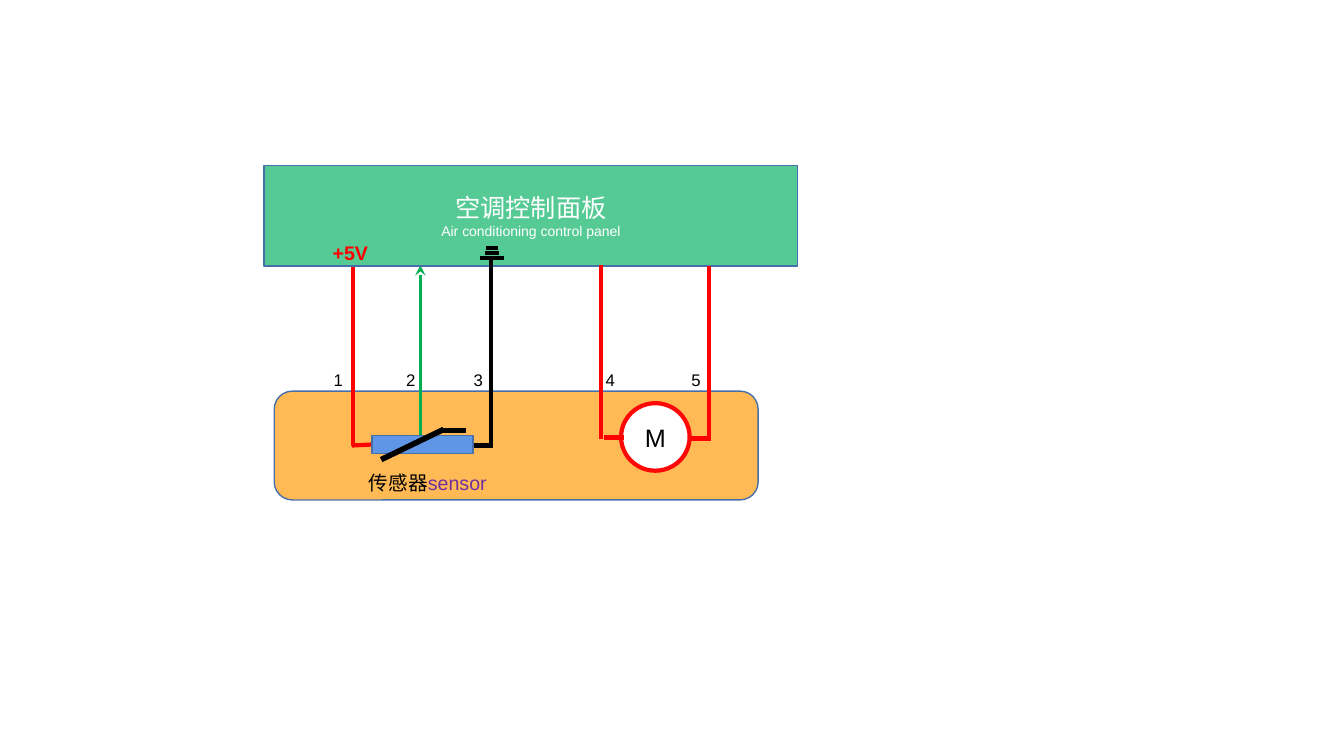
from pptx import Presentation
from pptx import util as u
from pptx.dml.color import RGBColor
from pptx.enum import shapes, text
from pptx.oxml import parse_xml
from pptx.oxml.ns import nsdecls

PX = u.Inches(1) // 100
FONT = "Arial"
WHITE = RGBColor(0xFF, 0xFF, 0xFF)
BLACK = RGBColor(0, 0, 0)
RED = RGBColor(0xFF, 0, 0)
GREEN = RGBColor(0, 0xB0, 0x50)
PURPLE = RGBColor(0x70, 0x30, 0xA0)
EDGE = RGBColor(0x47, 0x6F, 0xAA)
MINT = RGBColor(0x56, 0xCA, 0x95)
AMBER = RGBColor(0xFF, 0xBA, 0x55)
BLUE = RGBColor(0x60, 0x96, 0xE6)
RING = RGBColor(0xFD, 0x07, 0x07)


def px(*nums):
    return [n * PX for n in nums]


def write(para, words, size=12, color=BLACK, bold=False):
    run = para.add_run()
    run.text = words
    run.font.name = FONT
    run.font.size = u.Pt(size)
    run.font.color.rgb = color
    run.font.bold = bold


def add_box(tree, kind, area, fill, line=EDGE, width=1):
    box = tree.add_shape(kind, *px(*area))
    box.shadow.inherit = False
    box.fill.solid()
    box.fill.fore_color.rgb = fill
    box.line.color.rgb = line
    box.line.width = u.Pt(width)
    frame = box.text_frame
    frame.word_wrap = True
    frame.vertical_anchor = text.MSO_ANCHOR.MIDDLE
    frame.paragraphs[0].alignment = text.PP_ALIGN.CENTER
    return frame


def add_label(tree, area):
    frame = tree.add_textbox(*px(*area)).text_frame
    frame.word_wrap = True
    return frame.paragraphs[0]


def add_wire(tree, start, end, color, width, head=False):
    wire = tree.add_connector(shapes.MSO_CONNECTOR.STRAIGHT, *px(*start, *end))
    wire.line.color.rgb = color
    wire.line.width = u.Pt(width)
    if head:
        arrow = parse_xml(f'<a:headEnd {nsdecls("a")} type="stealth"/>')
        wire.line._get_or_add_ln().append(arrow)
    wire._element.spPr.append(parse_xml(f'<a:effectLst {nsdecls("a")}/>'))


def add_panel(tree):
    frame = add_box(tree, shapes.MSO_SHAPE.RECTANGLE, (262, 164, 529, 100), MINT)
    write(frame.paragraphs[0], "空调控制面板", size=18, color=WHITE)
    para = frame.add_paragraph()
    para.alignment = text.PP_ALIGN.CENTER
    write(para, "Air conditioning control panel", size=10, color=WHITE)
    write(add_label(tree, (320, 234, 58, 34)), "+5V", size=14, color=RED, bold=True)


def add_ground(tree, mid, base):
    group = tree.add_group_shape().shapes
    for step, half in enumerate((12, 7, 6)):
        y = base - 5 * step
        add_wire(group, (mid - half, y), (mid + half, y), BLACK, 2.25)


def add_motor(tree):
    frame = add_box(tree, shapes.MSO_SHAPE.OVAL, (616, 400, 68, 67), WHITE, RING, 3)
    write(frame.paragraphs[0], "M", size=18)
    add_wire(tree, (596, 436), (596, 263), RED, 3)
    add_wire(tree, (599, 434), (619, 434), RED, 3)
    add_wire(tree, (703, 437), (703, 264), RED, 3)
    add_wire(tree, (685, 435), (705, 435), RED, 3)


def add_sensor(tree):
    add_wire(tree, (468, 442), (488, 442), BLACK, 3)
    add_wire(tree, (349, 442), (369, 441), RED, 3)
    group = tree.add_group_shape().shapes
    add_box(group, shapes.MSO_SHAPE.RECTANGLE, (369, 432, 100, 18), BLUE)
    add_wire(group, (378, 456), (440, 426), BLACK, 4)
    add_wire(group, (438, 427), (462, 427), BLACK, 4)
    para = add_label(tree, (356, 462, 144, 34))
    write(para, "传感器", size=14)
    write(para, "sensor", size=14, color=PURPLE)


def main():
    deck = Presentation()
    deck.slide_width, deck.slide_height = u.Inches(13.33), u.Inches(7.5)
    tree = deck.slides.add_slide(deck.slide_layouts[6]).shapes
    add_box(tree, shapes.MSO_SHAPE.ROUNDED_RECTANGLE, (272, 388, 480, 108), AMBER)
    add_wire(tree, (417, 263), (417, 432), GREEN, 2.5, head=True)
    add_wire(tree, (350, 261), (350, 442), RED, 2.5)
    add_panel(tree)
    add_motor(tree)
    add_wire(tree, (487, 255), (487, 444), BLACK, 2.5)
    add_ground(tree, 488, 256)
    add_sensor(tree)
    for pin, left in enumerate((321, 393, 460, 591, 676), 1):
        write(add_label(tree, (left, 362, 43 if pin > 3 else 25, 30)), str(pin))
    deck.save("out.pptx")


if __name__ == "__main__":
    main()
